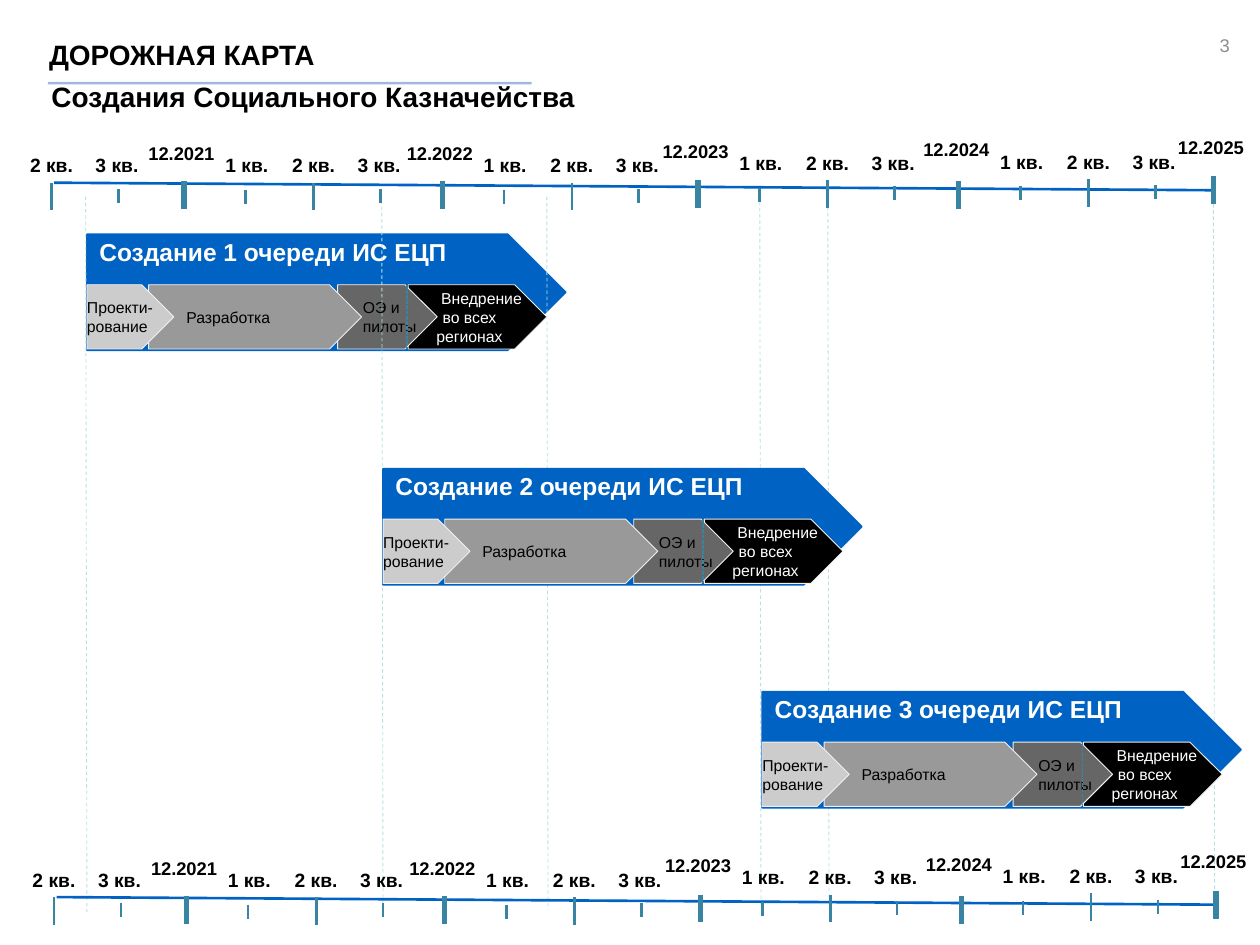
from lxml import etree
from pptx import Presentation
from pptx.dml.color import RGBColor
from pptx.enum.dml import MSO_LINE
from pptx.enum.shapes import MSO_CONNECTOR, MSO_SHAPE
from pptx.enum.text import MSO_ANCHOR, PP_ALIGN
from pptx.oxml.ns import qn
from pptx.util import Inches, Pt

STRAIGHT = MSO_CONNECTOR.STRAIGHT
PLATE, RECT = MSO_SHAPE.PENTAGON, MSO_SHAPE.RECTANGLE
DASH, DOTS = MSO_LINE.DASH, MSO_LINE.SQUARE_DOT
LEFT, CENTER, RIGHT = PP_ALIGN.LEFT, PP_ALIGN.CENTER, PP_ALIGN.RIGHT
TOP, MIDDLE = MSO_ANCHOR.TOP, MSO_ANCHOR.MIDDLE

BLUE, TEAL, PALE, EDGE = "0062C2", "3984A3", "BBE0E3", "F0F0F4"
BLACK, WHITE = "000000", "FFFFFF"
PAD = (0.1, 0.05, 0.1, 0.05)
FLAT = (0, 0, 0, 0)

# year end, x of its tick, top of its label, top of its tick
YEARS = [
    ("12.2021", 1.46, 1.08, 1.44),
    ("12.2022", 3.51, 1.08, 1.44),
    ("12.2023", 5.54, 1.06, 1.43),
    ("12.2024", 7.61, 1.05, 1.44),
    ("12.2025", 9.63, 1.03, 1.4),
]
# quarter, label offset, tick offset, tick drop, tick height
QUARTERS = [
    ("1 кв.", 0.23, 0.49, 0.43, 0.11),
    ("2 кв.", 0.76, 1.03, 0.37, 0.22),
    ("3 кв.", 1.28, 1.56, 0.42, 0.11),
]
# lines of text, offset, width, fill, font colour, insets, indent, align
STEPS = [
    (["Внедрение во всех регионах"], 2.55, 1.1, BLACK, WHITE, FLAT, 0.19, CENTER),
    (["ОЭ и", "пилоты"], 1.99, 0.79, "666666", BLACK, FLAT, 0.2, LEFT),
    (["Разработка"], 0.49, 1.69, "999999", BLACK, PAD, 0.2, LEFT),
    (["Проекти-", "рование"], 0, 0.69, "CCCCCC", BLACK, FLAT, 0, LEFT),
]
# x, top and bottom of each vertical guide
GUIDES = [(0.68, 1.56, 7.24), (3.03, 1.54, 7.2), (4.34, 1.56, 7.22),
          (6.57, 1.54, 7.2), (6.03, 1.55, 7.21), (9.63, 1.52, 7.18)]


def color(code):
    return RGBColor.from_string(code)


def write(frame, lines, size, tint=BLACK, bold=False, align=LEFT,
          insets=PAD, anchor=TOP, indent=0):
    frame.word_wrap = True
    frame.vertical_anchor = anchor
    (frame.margin_left, frame.margin_top,
     frame.margin_right, frame.margin_bottom) = map(Inches, insets)
    for i, line in enumerate(lines):
        para = frame.add_paragraph() if i else frame.paragraphs[0]
        para.alignment = align
        if indent:
            para._p.get_or_add_pPr().set("indent", str(Inches(indent)))
        run = para.add_run()
        run.text = line
        font = run.font
        font.name, font.size, font.bold = "Arial", Pt(size), bold
        font.color.rgb = color(tint)


def label(slide, text, box, size, **style):
    area = slide.shapes.add_textbox(*map(Inches, box))
    write(area.text_frame, [text], size, **style)


def line(slide, start, end, tint, width, dash=None):
    link = slide.shapes.add_connector(STRAIGHT, *map(Inches, start + end))
    link.line.color.rgb = color(tint)
    link.line.width = Pt(width)
    if dash:
        link.line.dash_style = dash
    etree.SubElement(link._element.spPr, qn("a:effectLst"))


def block(slide, kind, box, fill, edge=None, width=0.5):
    shape = slide.shapes.add_shape(kind, *map(Inches, box))
    shape.shadow.inherit = False
    shape.fill.solid()
    shape.fill.fore_color.rgb = color(fill)
    if edge:
        shape.line.color.rgb = color(edge)
        shape.line.width = Pt(width)
    else:
        shape.line.fill.background()
    return shape


def tick(slide, x, y, height, width):
    line(slide, (x, y), (x, y + height), TEAL, width)


def quarter(slide, item, x, y):
    """Add one quarter, placed from the year tick x and year label top y."""
    name, shift, step, drop, height = item
    label(slide, name, (x + shift, y + 0.09, 0.6, 0.29), 11, bold=True)
    tick(slide, x + step, y + drop, height, 1.5)


def scale(slide, dx, dy):
    line(slide, (0.43 + dx, 1.45 + dy), (9.63 + dx, 1.51 + dy), BLUE, 1.5)
    for item in QUARTERS[1:]:
        quarter(slide, item, -0.62 + dx, 1.08 + dy)
    for year, x, y, top in YEARS:
        x, y = x + dx, y + dy
        label(slide, year, (x - 0.38, y, 0.75, 0.28), 10.5, bold=True)
        tick(slide, x, top + dy, 0.22, 3)
        if year != YEARS[-1][0]:
            for item in QUARTERS:
                quarter(slide, item, x, y)


def stage(slide, number, x, y):
    block(slide, PLATE, (x, y, 3.8, 0.92), BLUE, BLUE, 1)
    for lines, shift, width, fill, tint, insets, indent, align in STEPS:
        box = (x + shift, y + 0.4, width, 0.51)
        step = block(slide, PLATE, box, fill, EDGE)
        write(step.text_frame, lines, 9, tint, align=align,
              insets=insets, anchor=MIDDLE, indent=indent)
    label(slide, f"Создание {number} очереди ИС ЕЦП",
          (x, y - 0.03, 3.36, 0.34), 14, tint=WHITE, bold=True)
    line(slide, (x + 2.54, y + 0.4), (x + 2.54, y + 0.91), TEAL, 0.75, DOTS)


def header(slide):
    block(slide, RECT, (0.38, 0.65, 3.84, 0.02), "A0B8E0")
    label(slide, "3", (7.51, 0.27, 2.25, 0.4), 10.5, tint="8C8C8C",
          align=RIGHT, insets=FLAT)
    title = slide.shapes.title
    title.left, title.top, title.width, title.height = map(
        Inches, (0.38, 0.3, 3.97, 0.25))
    write(title.text_frame, ["ДОРОЖНАЯ КАРТА"], 16, bold=True,
          insets=(0.01, 0.01, 0, 0), anchor=MIDDLE)
    label(slide, "Создания Социального Казначейства",
          (0.31, 0.58, 4.41, 0.37), 16, bold=True)


def main():
    deck = Presentation()
    deck.slide_width, deck.slide_height = Inches(10), Inches(7.5)
    slide = deck.slides.add_slide(deck.slide_layouts[5])
    header(slide)
    stage(slide, 1, 0.69, 1.86)
    for x, top, end in GUIDES:
        line(slide, (x, top), (x + 0.01, end), PALE, 0.5, DASH)
    scale(slide, 0, 0)
    scale(slide, 0.02, 5.67)
    stage(slide, 2, 3.04, 3.72)
    stage(slide, 3, 6.05, 5.49)
    deck.save("out.pptx")


if __name__ == "__main__":
    main()
